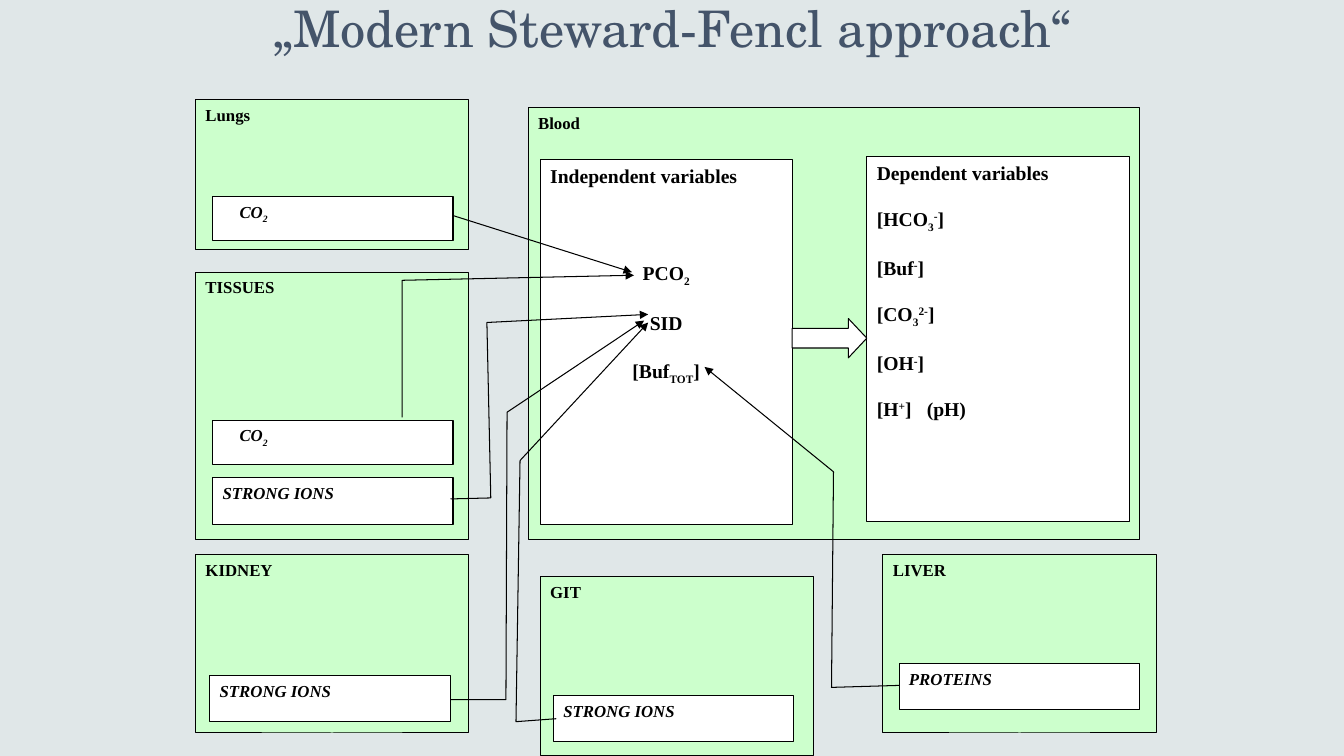
from dataclasses import dataclass

from lxml.etree import SubElement
from pptx import Presentation
from pptx.dml.color import RGBColor
from pptx.enum.shapes import MSO_CONNECTOR as Line, MSO_SHAPE as Shape
from pptx.enum.text import MSO_ANCHOR as Anchor, PP_ALIGN as Align
from pptx.oxml.ns import qn
from pptx.util import Pt


@dataclass(frozen=True)
class Theme:
    background: str = "E0E7E8"
    organ: str = "CCFFCC"
    paper: str = "FFFFFF"
    ink: str = "000000"
    heading: str = "44546A"
    heading_font: str = "TeX Gyre Schola"
    body_font: str = "Times New Roman"
    heading_size: float = 36
    list_size: float = 14
    label_size: float = 12
    stroke: float = 0.75


BASELINES = {"_": "-25000", "^": "30000"}


def write(para, text, font, size, color, bold=False, italic=False,
          align=Align.LEFT, before=0, tab=None):
    if tab:
        stops = SubElement(para._p.get_or_add_pPr(), qn("a:tabLst"))
        SubElement(stops, qn("a:tab"), pos=str(Pt(tab)), algn="l")
    para.alignment = align
    para.space_before = Pt(before)
    for piece in text.split("|"):
        span = para.add_run()
        span.text = piece.lstrip("_^")
        span.font.name = font
        span.font.size = Pt(size)
        span.font.bold = bold
        span.font.italic = italic
        span.font.color.rgb = RGBColor.from_string(color)
        if piece[0] in BASELINES:
            span._r.get_or_add_rPr().set("baseline", BASELINES[piece[0]])


class Diagram:
    def __init__(self, page, theme):
        self.page = page
        self.theme = theme
        page.background.fill.solid()
        page.background.fill.fore_color.rgb = RGBColor.from_string(theme.background)

    def title(self, text, left, top, width, height):
        box = self.page.shapes.add_textbox(*map(Pt, (left, top, width, height)))
        frame = box.text_frame
        frame.word_wrap = True
        frame.vertical_anchor = Anchor.MIDDLE
        write(frame.paragraphs[0], text, self.theme.heading_font,
              self.theme.heading_size, self.theme.heading, align=Align.CENTER)

    def block(self, left, top, width, height, fill, kind=Shape.RECTANGLE):
        box = self.page.shapes.add_shape(kind, *map(Pt, (left, top, width, height)))
        box.shadow.inherit = False
        box.fill.solid()
        box.fill.fore_color.rgb = RGBColor.from_string(fill)
        self.outline(box)
        return box

    def label(self, text, left, top, width, height, fill, italic=False, indent=0):
        frame = self.block(left, top, width, height, fill).text_frame
        frame.word_wrap = True
        frame.vertical_anchor = Anchor.TOP
        frame.margin_left = Pt(7.2 + indent)
        write(frame.paragraphs[0], text, self.theme.body_font, self.theme.label_size,
              self.theme.ink, bold=True, italic=italic)

    def variables(self, heading, entries, left, top, width, height, align, first_gap, gap):
        frame = self.block(left, top, width, height, self.theme.paper).text_frame
        frame.word_wrap = True
        frame.vertical_anchor = Anchor.TOP
        style = dict(font=self.theme.body_font, size=self.theme.list_size,
                     color=self.theme.ink, bold=True)
        write(frame.paragraphs[0], heading, **style)
        for index, entry in enumerate(entries):
            write(frame.add_paragraph(), entry, align=align,
                  before=gap if index else first_gap,
                  tab=35.7 if "\t" in entry else None, **style)

    def outline(self, item, arrow=False):
        item.line.color.rgb = RGBColor.from_string(self.theme.ink)
        item.line.width = Pt(self.theme.stroke)
        if arrow:
            SubElement(item.line._get_or_add_ln(), qn("a:tailEnd"), type="triangle")

    def arrow(self, start, end):
        link = self.page.shapes.add_connector(Line.STRAIGHT, *map(Pt, start + end))
        self.outline(link, arrow=True)
        SubElement(link._element.spPr, qn("a:effectLst"))

    def route(self, *points):
        start, *rest = [tuple(map(Pt, point)) for point in points]
        builder = self.page.shapes.build_freeform(*start)
        builder.add_line_segments(rest, close=False)
        path_shape = builder.convert_to_shape()
        path_shape.shadow.inherit = False
        path_shape.fill.background()
        self.outline(path_shape, arrow=True)


def main():
    theme = Theme()
    deck = Presentation()
    deck.slide_width, deck.slide_height = Pt(960), Pt(540)
    diagram = Diagram(deck.slides.add_slide(deck.slide_layouts[6]), theme)
    diagram.title("„Modern Steward-Fencl approach“", 156.2, -25.2, 648, 90)

    organ_width = 195.1
    for name, left, top, width, height in (
        ("Lungs", 139.7, 71.3, organ_width, 107.3),
        ("TISSUES", 139.7, 194.4, organ_width, 190.8),
        ("KIDNEY", 139.7, 396, organ_width, 127.6),
        ("GIT", 385.9, 411.8, organ_width, 128.2),
        ("LIVER", 630.7, 396, organ_width, 127.6),
        ("Blood", 377.3, 77, 437, 308.2),
    ):
        diagram.label(name, left, top, width, height, theme.organ)

    for name, left, top, height, indent in (
        ("CO|_2", 151.9, 140.4, 31.7, 12),
        ("CO|_2", 151.9, 300.2, 31.7, 12),
        ("STRONG IONS", 151.9, 341.3, 33.1, 0),
        ("STRONG IONS", 149.8, 482.4, 33.1, 0),
        ("STRONG IONS", 395.3, 496.8, 33.1, 0),
        ("PROTEINS", 642.2, 473.8, 33.1, 0),
    ):
        diagram.label(name, left, top, 171.7, height, theme.paper,
                      italic=True, indent=indent)

    diagram.variables("Independent variables", ("PCO|_2", "SID", "[Buf|_TOT|]"),
                      385.9, 113.8, 180, 260.6, Align.CENTER, 52, 17)
    diagram.variables("Dependent variables",
                      ("[HCO|_3|^-|]", "[Buf|^-|]", "[CO|_3|^2-|]", "[OH|^-|]",
                       "[H|^+|]\t(pH)"),
                      619.2, 111.6, 187.9, 260.6, Align.LEFT, 16, 16)

    diagram.arrow((324, 154.1), (451.4, 194.4))
    for points in (
        ((287.3, 298.1), (287.3, 200.2), (452.9, 196.6)),
        ((321.8, 356.4), (350.6, 355.7), (347.8, 230.4), (463, 224.6)),
        ((321.8, 499.7), (361.4, 499.7), (362.2, 294.5), (460.1, 229)),
        ((397.4, 513.4), (368.6, 515.5), (371.5, 329), (463, 230.4)),
        ((642.2, 489.6), (594, 491), (595.4, 337), (503.3, 262.1)),
    ):
        diagram.route(*points)

    outcome = diagram.block(565.9, 227.5, 53.3, 28.1, theme.paper, Shape.RIGHT_ARROW)
    outcome.adjustments[0] = 0.5
    outcome.adjustments[1] = 0.47
    deck.save("out.pptx")


if __name__ == "__main__":
    main()
